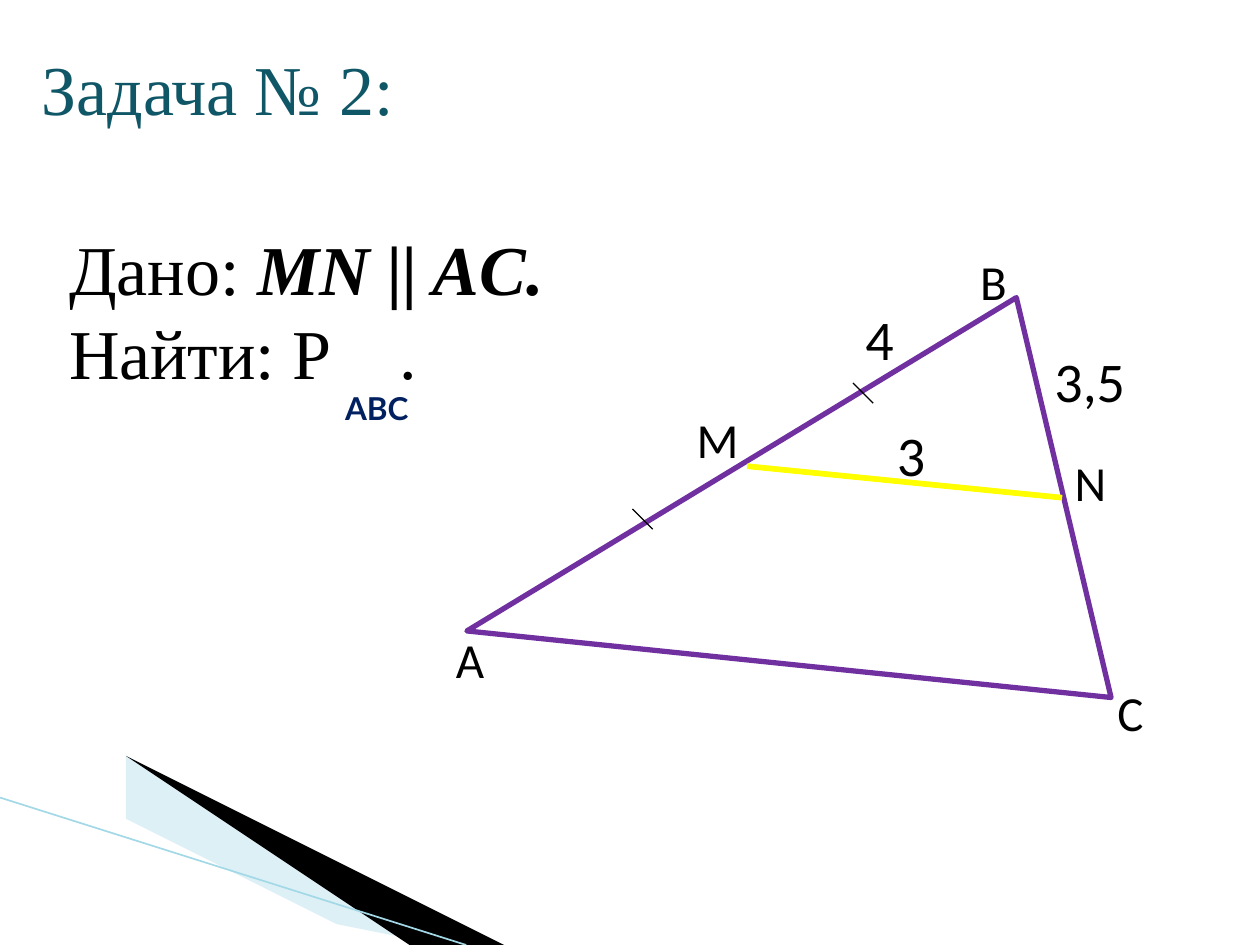
from dataclasses import dataclass

from lxml import etree
from pptx import Presentation, util as u
from pptx.dml.color import RGBColor
from pptx.enum import shapes, text
from pptx.oxml import ns

WIDTH, HEIGHT = 10, 7.5


@dataclass(frozen=True)
class Theme:
    serif: str = "Times New Roman"
    sans: str = "Calibri"
    index_font: str = "Lato"
    title: str = "0F5666"
    ink: str = "000000"
    paper: str = "FFFFFF"
    index: str = "002060"
    triangle: str = "7030A0"
    midline: str = "FFFF00"
    pale: str = "DDF0F6"
    edge: str = "A3D9E7"
    heading_size: int = 40
    number_size: int = 32
    vertex_size: int = 28
    index_size: int = 18


@dataclass(frozen=True)
class Label:
    caption: str
    left: float
    top: float


@dataclass(frozen=True)
class Segment:
    start: tuple[float, float]
    end: tuple[float, float]
    color: str
    weight: float


THEME = Theme()
VERTEX_BOX = (0.58, 0.57)
NUMBER_BOX = (0.92, 0.63)
VERTICES = [Label("A", 3.52, 4.95), Label("B", 7.68, 1.95), Label("C", 8.77, 5.37),
            Label("N", 8.43, 3.54), Label("M", 5.43, 3.2)]
NUMBERS = [Label("3,5", 8.27, 2.7), Label("3", 7.02, 3.29), Label("4", 6.77, 2.37)]
TICK = 0.16
TICK_STARTS = [(5.02, 4.04), (6.77, 3.04)]


def rgb(color: str) -> RGBColor:
    return RGBColor.from_string(color)


def style(font, name: str, size: float, color: str, bold: bool = False) -> None:
    font.name, font.size, font.bold = name, u.Pt(size), bold
    font.color.rgb = rgb(color)


def add_box(slide, left: float, top: float, width: float, height: float):
    box = slide.shapes.add_textbox(*map(u.Inches, (left, top, width, height)))
    box.text_frame.word_wrap = True
    return box.text_frame


def add_label(slide, label: Label, size: tuple[float, float], font: str,
              points: float, color: str, bold: bool = False) -> None:
    paragraph = add_box(slide, label.left, label.top, *size).paragraphs[0]
    paragraph.text = label.caption
    style(paragraph.font, font, points, color, bold)


def add_segment(slide, segment: Segment) -> None:
    line = slide.shapes.add_connector(
        shapes.MSO_CONNECTOR.STRAIGHT, *map(u.Inches, segment.start + segment.end))
    line.line.color.rgb = rgb(segment.color)
    line.line.width = u.Pt(segment.weight)
    etree.SubElement(line._element.spPr, ns.qn("a:effectLst"))


def add_wedge(slide, points: list[tuple[float, float]], color: str) -> None:
    builder = slide.shapes.build_freeform(*points[0], scale=u.Inches(1))
    builder.add_line_segments(points[1:], close=True)
    wedge = builder.convert_to_shape()
    wedge.shadow.inherit = False
    wedge.fill.solid()
    wedge.fill.fore_color.rgb = rgb(color)
    wedge.line.fill.background()


def add_decoration(slide) -> None:
    add_wedge(slide, [(0.55, 6.51), (5.95, HEIGHT), (4.56, HEIGHT), (0.55, 6.5)], THEME.pale)
    add_wedge(slide, [(0.53, 6.49), (4.57, HEIGHT), (3.72, HEIGHT), (0.54, 6.5)], THEME.ink)
    add_wedge(slide, [(0, 6.33), (3.7, HEIGHT), (0, HEIGHT)], THEME.paper)
    add_segment(slide, Segment((0, 6.33), (3.7, HEIGHT), THEME.edge, 0.95))


def add_title(slide) -> None:
    title = slide.shapes.title
    title.left, title.top, title.width, title.height = map(u.Inches, (0.23, 0.31, 7.5, 0.77))
    title.text_frame.vertical_anchor = text.MSO_ANCHOR.MIDDLE
    paragraph = title.text_frame.paragraphs[0]
    paragraph.text = "Задача № 2:"
    paragraph.alignment = text.PP_ALIGN.LEFT
    style(paragraph.font, THEME.serif, THEME.heading_size, THEME.title)


def add_conditions(slide) -> None:
    frame = add_box(slide, 0.45, 1.74, 5, 1.75)
    given, find = frame.paragraphs[0], frame.add_paragraph()
    given.add_run().text = "Дано: "
    relation = given.add_run()
    relation.text = "MN || AC."
    relation.font.bold = relation.font.italic = True
    # The tab leaves room for the index under the full stop
    find.add_run().text = "Найти: Р\t."
    tabs = etree.SubElement(find._p.get_or_add_pPr(), ns.qn("a:tabLst"))
    etree.SubElement(tabs, ns.qn("a:tab"), pos=str(u.Inches(2.62)), algn="l")
    for paragraph in (given, find):
        style(paragraph.font, THEME.serif, THEME.heading_size, THEME.ink)
    add_label(slide, Label("ABC", 2.64, 3.04), (1.17, 0.4),
              THEME.index_font, THEME.index_size, THEME.index, bold=True)


def add_drawing(slide) -> None:
    triangle = slide.shapes.add_shape(
        shapes.MSO_SHAPE.ISOSCELES_TRIANGLE, *map(u.Inches, (3.85, 2.2, 5.14, 3.08)))
    triangle.adjustments[0] = 0.791
    triangle.rotation = 5.9
    triangle.shadow.inherit = False
    triangle.fill.background()
    triangle.line.color.rgb = rgb(THEME.triangle)
    triangle.line.width = u.Pt(3)

    # Midline, then the marks of equal halves
    add_segment(slide, Segment((8.43, 3.95), (5.93, 3.7), THEME.midline, 3.25))
    for x, y in TICK_STARTS:
        add_segment(slide, Segment((x, y), (x + TICK, y + TICK), THEME.ink, 0.75))

    for label in NUMBERS:
        add_label(slide, label, NUMBER_BOX, THEME.sans, THEME.number_size, THEME.ink)
    for label in VERTICES:
        add_label(slide, label, VERTEX_BOX, THEME.sans, THEME.vertex_size, THEME.ink)


def main() -> None:
    presentation = Presentation()
    presentation.slide_width, presentation.slide_height = u.Inches(WIDTH), u.Inches(HEIGHT)
    slide = presentation.slides.add_slide(presentation.slide_layouts[5])
    add_decoration(slide)
    add_title(slide)
    add_drawing(slide)
    add_conditions(slide)
    presentation.save("out.pptx")


if __name__ == "__main__":
    main()
